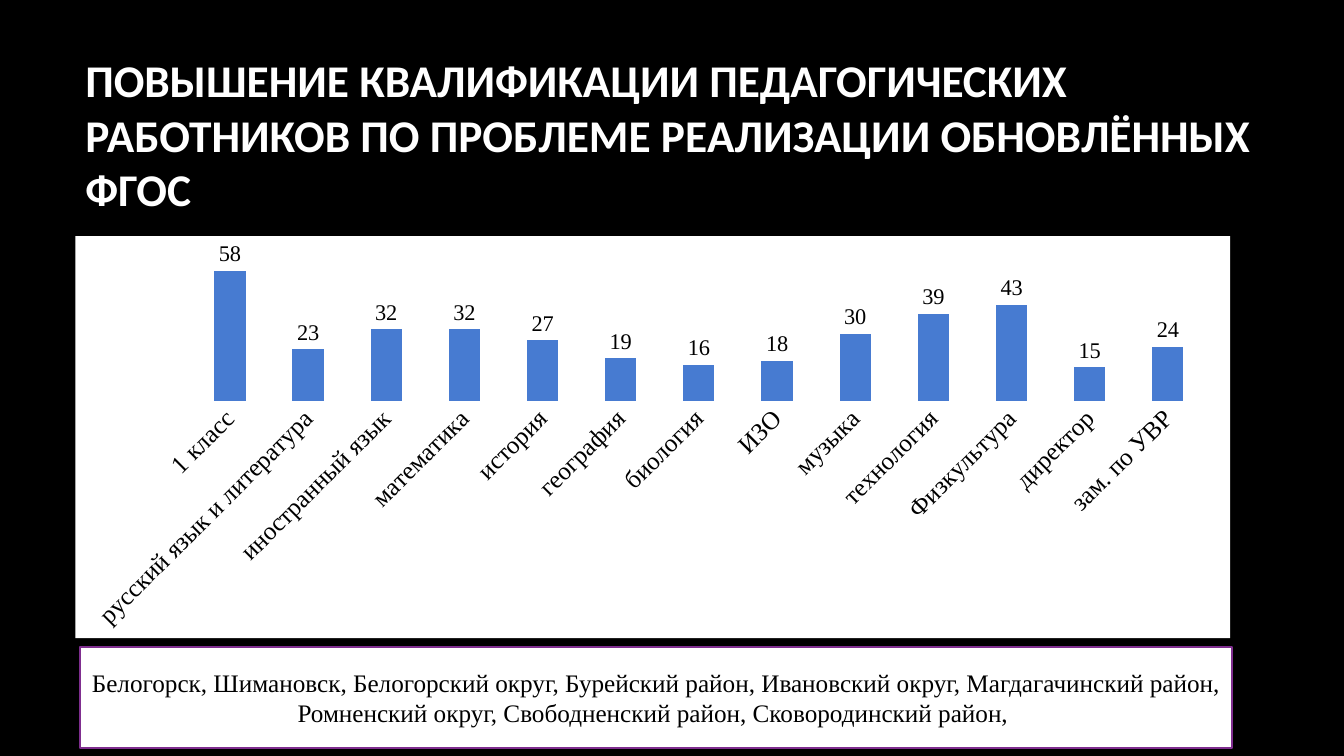
from lxml import etree
from pptx import Presentation
from pptx.chart.data import CategoryChartData
from pptx.dml.color import RGBColor
from pptx.enum.chart import XL_CHART_TYPE, XL_LABEL_POSITION, XL_TICK_MARK
from pptx.enum.shapes import MSO_SHAPE
from pptx.enum.text import MSO_ANCHOR, PP_ALIGN
from pptx.oxml import parse_xml
from pptx.oxml.ns import nsdecls, qn
from pptx.util import Cm, Pt

HEADING = "ПОВЫШЕНИЕ КВАЛИФИКАЦИИ ПЕДАГОГИЧЕСКИХ РАБОТНИКОВ ПО ПРОБЛЕМЕ РЕАЛИЗАЦИИ ОБНОВЛЁННЫХ ФГОС"
TEACHERS = {
    "1 класс": 58,
    "русский язык и литература": 23,
    "иностранный язык": 32,
    "математика": 32,
    "история": 27,
    "география": 19,
    "биология": 16,
    "ИЗО": 18,
    "музыка": 30,
    "технология": 39,
    "Физкультура": 43,
    "директор": 15,
    "зам. по УВР": 24,
}
DISTRICTS = (
    "Белогорск, Шимановск, Белогорский округ, Бурейский район, Ивановский округ, "
    "Магдагачинский район, Ромненский округ, Свободненский район, Сковородинский район, "
)


class Theme:
    black = RGBColor(0x00, 0x00, 0x00)
    white = RGBColor(0xFF, 0xFF, 0xFF)
    bar = RGBColor(0x47, 0x7B, 0xD1)
    border = RGBColor(0x7F, 0x2E, 0x8F)
    heading_font = "Calibri"
    body_font = "Times New Roman"
    heading_size = Pt(32.4)
    body_size = Pt(18)
    value_size = Pt(16)


HEADING_BOX = Cm(1.9), Cm(1.7), Cm(30.43), Cm(3.35)
CHART_BOX = Cm(1.9), Cm(5.95), Cm(29.1), Cm(10.13)
DISTRICTS_BOX = Cm(2.02), Cm(16.31), Cm(29.03), Cm(2.54)
PLOT = {"x": 0.1, "y": 0.02, "w": 0.88, "h": 0.39}


def style(font, name, size, color, bold=False):
    font.name, font.size, font.bold = name, size, bold
    font.color.rgb = color


def write(shape, text, *look, align=PP_ALIGN.LEFT):
    frame = shape.text_frame
    frame.word_wrap = True
    frame.vertical_anchor = MSO_ANCHOR.MIDDLE
    frame.text = text
    paragraph = frame.paragraphs[0]
    paragraph.alignment = align
    style(paragraph.runs[0].font, *look)


def set_plot_layout(chart):
    plot_area = chart.plots[0]._element.getparent()
    for old in plot_area.findall(qn("c:layout")):
        plot_area.remove(old)
    layout = etree.Element(qn("c:layout"))
    manual = etree.SubElement(layout, qn("c:manualLayout"))
    settings = {"layoutTarget": "inner", "xMode": "edge", "yMode": "edge", **PLOT}
    for tag, value in settings.items():
        etree.SubElement(manual, qn(f"c:{tag}")).set("val", str(value))
    plot_area.insert(0, layout)


def set_chart_background(chart, color):
    chart_space = chart._chartSpace
    chart_space.find(qn("c:chart")).addnext(parse_xml(
        f'<c:spPr {nsdecls("c", "a")}><a:solidFill><a:srgbClr val="{color}"/></a:solidFill>'
        "<a:ln><a:noFill/></a:ln></c:spPr>"
    ))


def add_teachers_chart(slide):
    teachers = CategoryChartData()
    teachers.categories = list(TEACHERS)
    teachers.add_series("Series 1", list(TEACHERS.values()))
    chart = slide.shapes.add_chart(XL_CHART_TYPE.COLUMN_CLUSTERED, *CHART_BOX, teachers).chart
    chart.has_legend = False
    chart.has_title = False
    style(chart.font, Theme.heading_font, Theme.body_size, Theme.black)
    set_chart_background(chart, Theme.white)
    set_plot_layout(chart)

    subjects = chart.category_axis
    subjects.major_tick_mark = XL_TICK_MARK.NONE
    subjects.format.line.fill.background()
    style(subjects.tick_labels.font, Theme.body_font, Theme.body_size, Theme.black)
    subjects._element.find(qn("c:txPr")).find(qn("a:bodyPr")).set("rot", "-2700000")

    counts = chart.value_axis
    counts.minimum_scale, counts.maximum_scale = 0, 70
    counts.has_major_gridlines = False
    counts.visible = False

    plot = chart.plots[0]
    plot.gap_width, plot.overlap = 150, -25
    plot.vary_by_categories = False
    bars = plot.series[0]
    bars.format.fill.solid()
    bars.format.fill.fore_color.rgb = Theme.bar
    labels = bars.data_labels
    labels.show_value = True
    labels.position = XL_LABEL_POSITION.OUTSIDE_END
    style(labels.font, Theme.body_font, Theme.value_size, Theme.black)


def main():
    deck = Presentation()
    deck.slide_width, deck.slide_height = Cm(33.87), Cm(19.05)
    slide = deck.slides.add_slide(deck.slide_layouts[6])
    slide.background.fill.solid()
    slide.background.fill.fore_color.rgb = Theme.black

    heading = slide.shapes.add_textbox(*HEADING_BOX)
    write(heading, HEADING, Theme.heading_font, Theme.heading_size, Theme.white, True)

    add_teachers_chart(slide)

    districts = slide.shapes.add_shape(MSO_SHAPE.RECTANGLE, *DISTRICTS_BOX)
    districts.shadow.inherit = False
    districts.fill.solid()
    districts.fill.fore_color.rgb = Theme.white
    districts.line.color.rgb = Theme.border
    districts.line.width = Pt(1.5)
    write(districts, DISTRICTS, Theme.body_font, Theme.body_size, Theme.black, align=PP_ALIGN.CENTER)

    deck.save("out.pptx")


if __name__ == "__main__":
    main()
